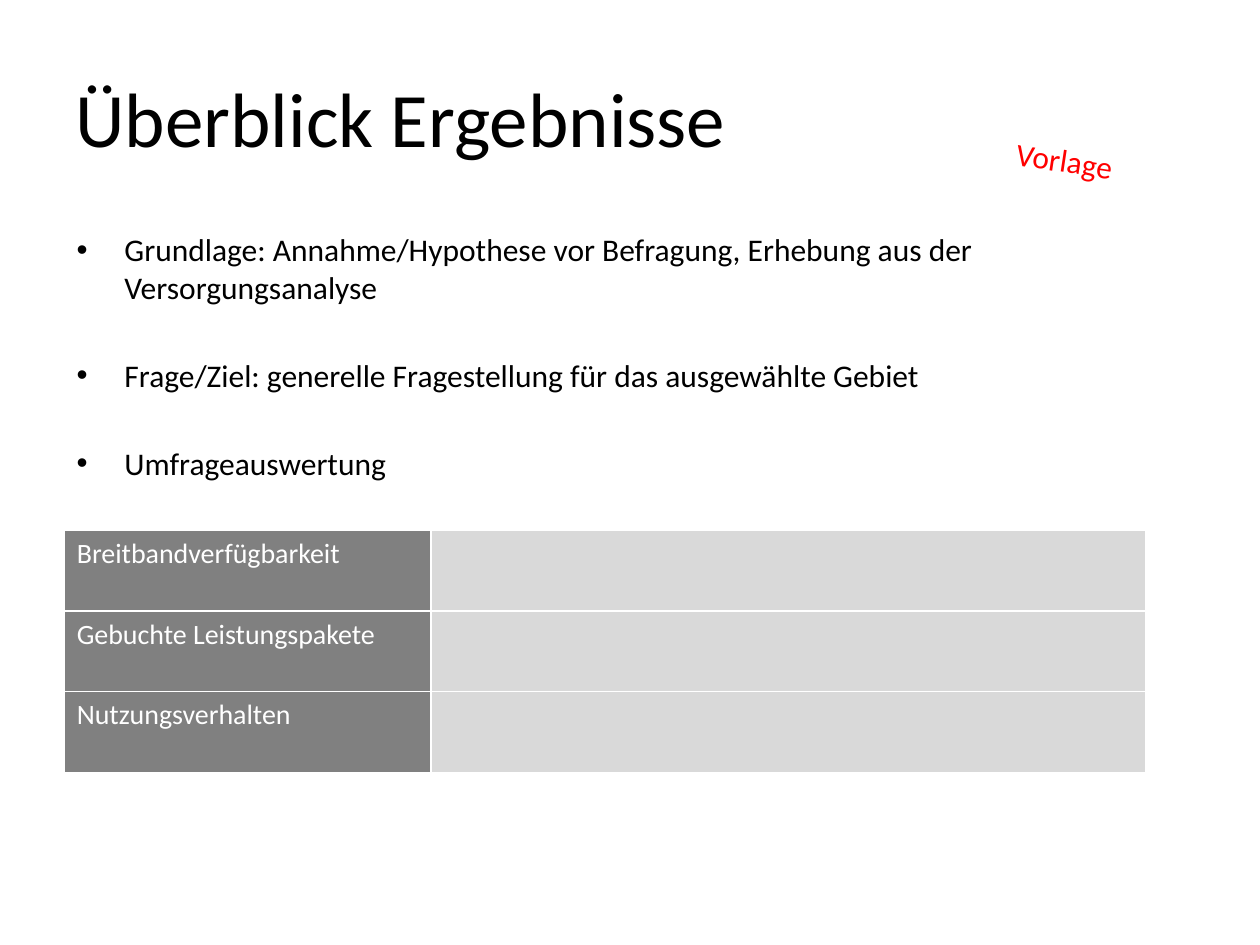
from lxml import etree
from pptx import Presentation
from pptx import util as u
from pptx.dml.color import RGBColor
from pptx.enum import text
from pptx.oxml.ns import qn

BLACK = RGBColor(0x00, 0x00, 0x00)
WHITE = RGBColor(0xFF, 0xFF, 0xFF)
RED = RGBColor(0xFF, 0x00, 0x00)
LABEL_GREY = RGBColor(0x80, 0x80, 0x80)
VALUE_GREY = RGBColor(0xD9, 0xD9, 0xD9)
FONT = "Calibri"

LEFT = u.Inches(0.51)
POINTS = [
    "Grundlage: Annahme/Hypothese vor Befragung, Erhebung aus der Versorgungsanalyse",
    "Frage/Ziel: generelle Fragestellung für das ausgewählte Gebiet",
    "Umfrageauswertung",
]
TOPICS = ["Breitbandverfügbarkeit", "Gebuchte Leistungspakete", "Nutzungsverhalten"]


def format_runs(paragraph, size, color):
    for run in paragraph.runs:
        run.font.name = FONT
        run.font.size = u.Pt(size)
        run.font.color.rgb = color


def add_title(slide, wording):
    title = slide.shapes.title
    title.left, title.top = u.Inches(0.5), u.Inches(0.3)
    title.width, title.height = u.Inches(9), u.Inches(1.25)
    title.text_frame.text = wording
    title.text_frame.vertical_anchor = text.MSO_ANCHOR.MIDDLE
    heading = title.text_frame.paragraphs[0]
    heading.alignment = text.PP_ALIGN.LEFT
    format_runs(heading, 44, BLACK)


def set_bullet(paragraph, indent):
    properties = paragraph._p.get_or_add_pPr()
    properties.set("marL", str(indent))
    properties.set("indent", str(-indent))
    etree.SubElement(properties, qn("a:buFont")).set("typeface", "Arial")
    etree.SubElement(properties, qn("a:buChar")).set("char", "•")


def add_bullets(slide, points):
    body = slide.shapes.add_textbox(LEFT, u.Inches(1.78), u.Inches(8.8), u.Inches(1.81))
    frame = body.text_frame
    frame.word_wrap = True
    frame.text = "\n".join(points)
    for number, point in enumerate(frame.paragraphs):
        point.space_before = u.Pt(28.6 if number else 0)
        set_bullet(point, u.Inches(0.38))
        format_runs(point, 18, BLACK)


def add_topic_table(slide, topics):
    """Topic labels on the left, empty result cells on the right."""
    widths = [u.Inches(2.91), u.Inches(5.67)]
    row_height = u.Inches(0.64)
    table = slide.shapes.add_table(
        len(topics), len(widths), LEFT, u.Inches(4.21),
        sum(widths), row_height * len(topics),
    ).table
    table.first_row = table.horz_banding = False
    for column, width in zip(table.columns, widths):
        column.width = width
    for row, topic in zip(table.rows, topics):
        row.height = row_height
        label, result = row.cells
        label.text_frame.text = topic
        format_runs(label.text_frame.paragraphs[0], 16, WHITE)
        for cell, color in ((label, LABEL_GREY), (result, VALUE_GREY)):
            cell.fill.solid()
            cell.fill.fore_color.rgb = color


def add_stamp(slide, wording):
    stamp = slide.shapes.add_textbox(
        u.Inches(7.78), u.Inches(1.07), u.Inches(1.34), u.Inches(0.4))
    stamp.rotation = 8.6
    frame = stamp.text_frame
    frame.word_wrap = True
    frame.auto_size = text.MSO_AUTO_SIZE.SHAPE_TO_FIT_TEXT
    frame.text = wording
    frame.paragraphs[0].alignment = text.PP_ALIGN.CENTER
    format_runs(frame.paragraphs[0], 18, RED)


def main():
    presentation = Presentation()
    presentation.slide_width = u.Inches(10)
    presentation.slide_height = u.Inches(7.5)
    slide = presentation.slides.add_slide(presentation.slide_layouts[5])
    add_title(slide, "Überblick Ergebnisse")
    add_bullets(slide, POINTS)
    add_topic_table(slide, TOPICS)
    add_stamp(slide, "Vorlage")
    presentation.save("out.pptx")


if __name__ == "__main__":
    main()
